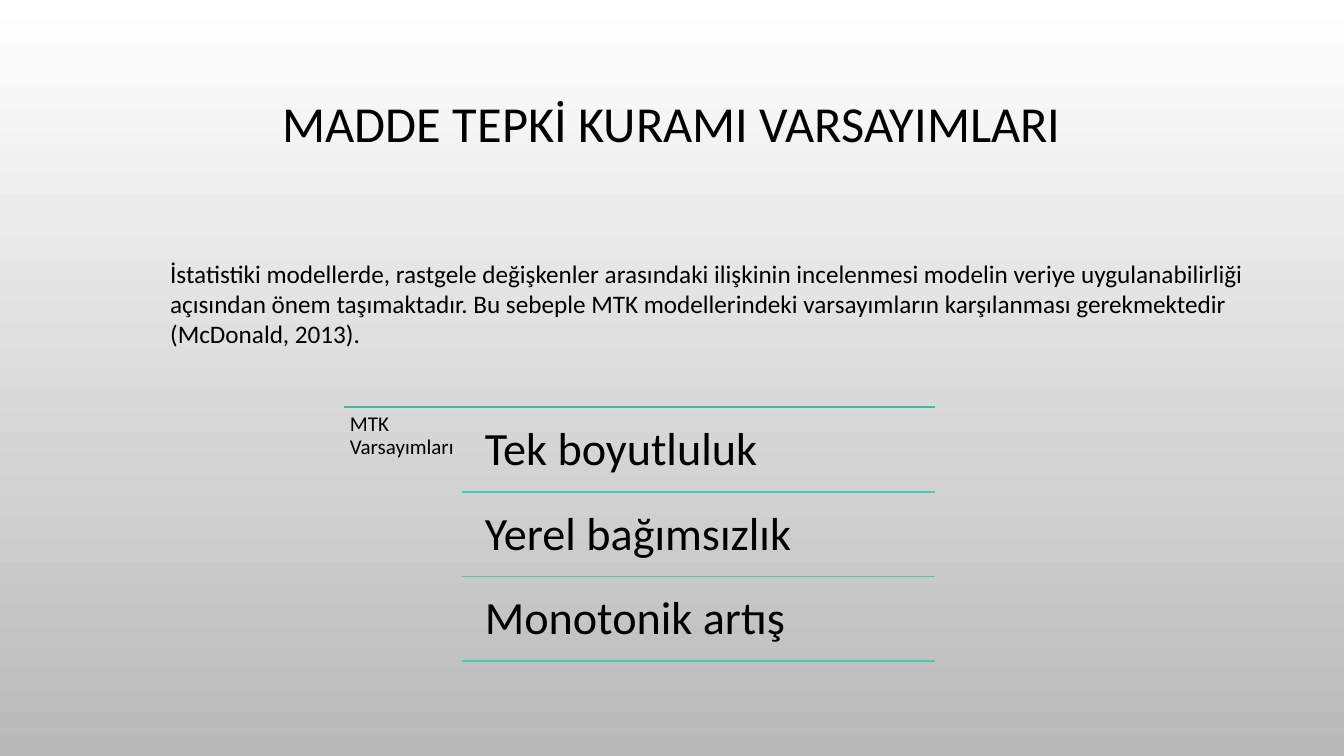
from lxml.etree import SubElement
from pptx import Presentation
from pptx.dml.color import RGBColor
from pptx.enum.shapes import MSO_CONNECTOR
from pptx.enum.text import MSO_ANCHOR as ANCHOR, PP_ALIGN as ALIGN
from pptx.oxml.ns import qn
from pptx.util import Pt

BLACK = RGBColor(0x00, 0x00, 0x00)
WHITE = RGBColor(0xFF, 0xFF, 0xFF)
GREY = RGBColor(0xB9, 0xB9, 0xB9)
TEAL = RGBColor(0x4B, 0xCA, 0xAD)
DARK_TEAL = RGBColor(0x44, 0xB7, 0x9D)
FONT = "Calibri"

TITLE = "MADDE TEPKİ KURAMI VARSAYIMLARI"
INTRO = ("İstatistiki modellerde, rastgele değişkenler arasındaki ilişkinin "
         "incelenmesi modelin veriye uygulanabilirliği açısından önem "
         "taşımaktadır. Bu sebeple MTK modellerindeki varsayımların "
         "karşılanması gerekmektedir (McDonald, 2013).")
LABEL = "MTK Varsayımları"
ASSUMPTIONS = ["Tek boyutluluk", "Yerel bağımsızlık", "Monotonik artış"]


def add_run(p, text, size):
    """Add one black run to a paragraph."""
    r = p.add_run()
    r.text = text
    r.font.name = FONT
    r.font.size = Pt(size)
    r.font.color.rgb = BLACK


def add_text(s, box, text, size, inset=None, spacing=None):
    """Add a wrapping text box, with an equal inset on all sides if given."""
    tf = s.shapes.add_textbox(*map(Pt, box)).text_frame
    tf.word_wrap = True
    if inset is not None:
        tf.margin_left = tf.margin_right = Pt(inset)
        tf.margin_top = tf.margin_bottom = Pt(inset)
    p = tf.paragraphs[0]
    p.line_spacing = spacing
    add_run(p, text, size)


def add_rule(s, left, right, y, color):
    """Draw a horizontal rule."""
    line = s.shapes.add_connector(MSO_CONNECTOR.STRAIGHT,
                                  Pt(left), Pt(y), Pt(right), Pt(y))
    line.line.color.rgb = color
    line.line.width = Pt(1.25)
    SubElement(line._element.spPr, qn("a:effectLst"))


def paint_background(s):
    """Fill the slide from white at the top to grey at the bottom."""
    fill = s.background.fill
    fill.gradient()
    fill.gradient_angle = 270
    for stop, color, position in zip(fill.gradient_stops, (WHITE, GREY), (0, 1)):
        stop.color.rgb = color
        stop.position = position


def add_title(s, box):
    """Place the title above an empty second line."""
    sp = s.shapes.title
    sp.left, sp.top, sp.width, sp.height = map(Pt, box)
    tf = sp.text_frame
    tf.word_wrap = True
    tf.vertical_anchor = ANCHOR.MIDDLE
    p = tf.paragraphs[0]
    p.alignment = ALIGN.CENTER
    p.line_spacing = 0.9
    add_run(p, TITLE, 36)
    p.add_line_break()
    SubElement(p._p, qn("a:endParaRPr"), sz="3600")


def add_assumptions(s, box):
    """List the assumptions in ruled rows beside their label."""
    left, top, width, height = box
    right = left + width
    label_width = width / 5
    row_height = height / len(ASSUMPTIONS)
    item_left = left + label_width
    text_left = item_left + 6.3
    add_rule(s, left, right, top, DARK_TEAL)
    add_text(s, (left, top, label_width, height), LABEL, 15, 4.5, 0.9)
    for i, name in enumerate(ASSUMPTIONS):
        y = top + i * row_height
        add_text(s, (text_left, y + 3, right - text_left, row_height - 3),
                 name, 33, 10, 0.9)
        add_rule(s, item_left, right, y + row_height, TEAL)


def main():
    """Build and save the slide."""
    prs = Presentation()
    prs.slide_width, prs.slide_height = Pt(960), Pt(540)
    s = prs.slides.add_slide(prs.slide_layouts[5])
    paint_background(s)
    add_title(s, (72, 49, 816, 126))
    add_text(s, (114.5, 180.7, 797, 72.7), INTRO, 18)
    add_assumptions(s, (245.5, 290.9, 422.6, 181.5))
    prs.save("out.pptx")


if __name__ == "__main__":
    main()
